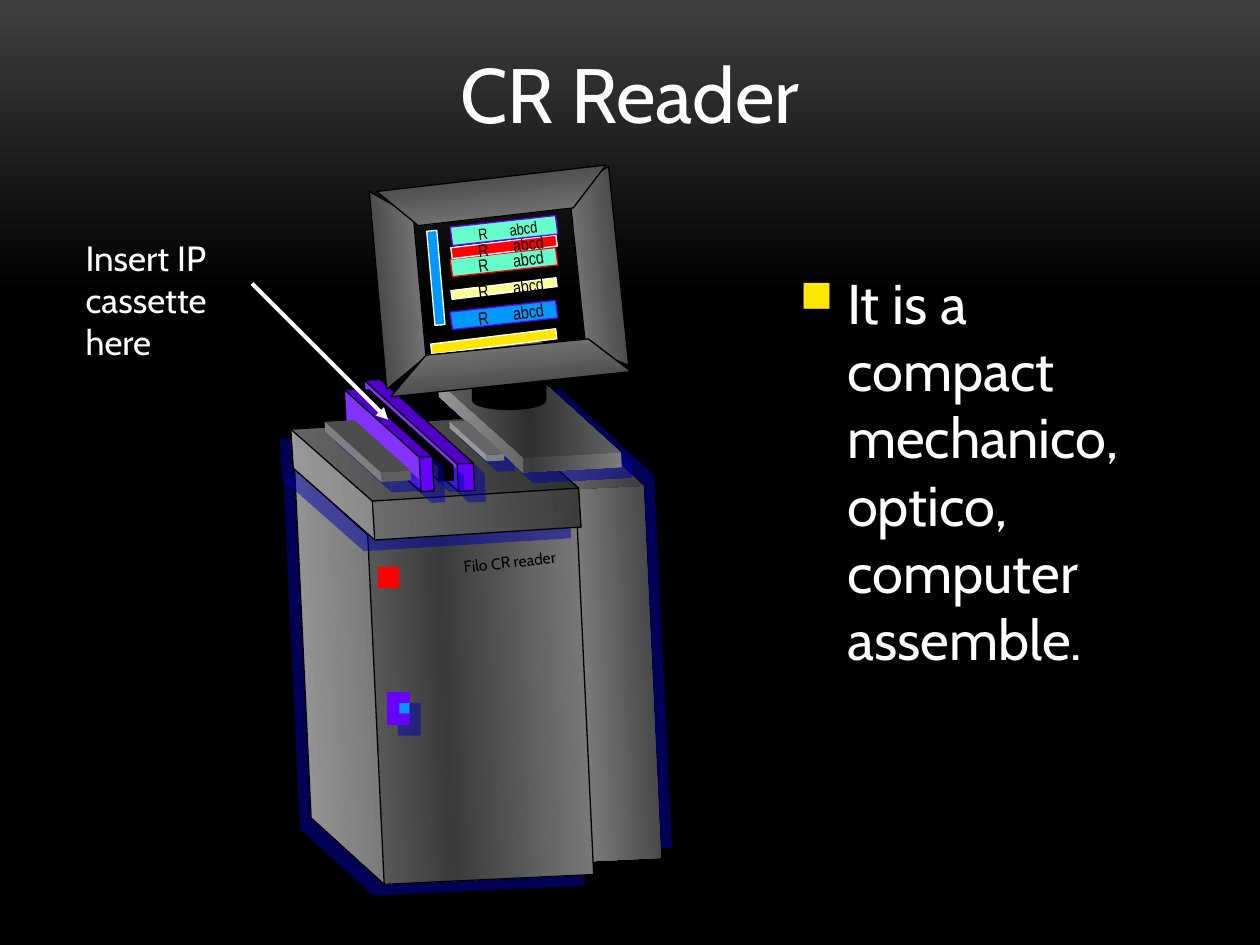
from lxml import etree
from pptx import Presentation
from pptx.dml.color import RGBColor
from pptx.enum.shapes import MSO_CONNECTOR, MSO_SHAPE
from pptx.enum.text import MSO_ANCHOR, PP_ALIGN
from pptx.oxml.ns import qn
from pptx.util import Pt

CUBE, CAN, RECT = MSO_SHAPE.CUBE, MSO_SHAPE.CAN, MSO_SHAPE.RECTANGLE
BAR = MSO_SHAPE.PARALLELOGRAM
CENTER, MIDDLE = PP_ALIGN.CENTER, MSO_ANCHOR.MIDDLE

# Content: colours and gradients
WHITE, BLACK, RED, BLUE = "FFFFFF", "000000", "FF0000", "0099FF"
VIOLET, YELLOW, MINT = "6600FF", "FFE701", "66FFCC"
LIGHT, DARK, SHADOW = "808080", "3B3B3B", "0000AC"
DARK_EDGES = [(0, DARK), (50, LIGHT), (100, DARK)]
LIGHT_EDGES = [(0, LIGHT), (50, DARK), (100, LIGHT)]
FADE_OUT = [(0, LIGHT), (100, DARK)]
FADE_IN = [(0, DARK), (100, LIGHT)]
BACKDROP = [(0, "3F3F3F"), (31, BLACK), (100, BLACK)]

# Content: cubes as box, rotation, depth, fill, line, shadow direction
cabinet = [
    ((194.4, 315.4, 264.2, 90), 267.3, 0.57, DARK_EDGES, None, 315),
    ((133.9, 303.8, 239.8, 159.8), 267.3, 0.25, LIGHT_EDGES, BLACK, 135),
    ((216, 192.2, 66.2, 162), 266.4, 0.663, FADE_OUT, BLACK, 135),
    ((206.6, 218.9, 66.2, 59.8), 267, 0.845, VIOLET, BLACK, 45),
    ((275.8, 191.5, 54, 102.2), 267, 0.845, LIGHT_EDGES, None, 45),
]
cassette_slot = [
    ((203.8, 221.8, 54, 54), 267, 0.845, BLACK, BLACK, 45),
    ((192.2, 227.5, 60.5, 48.2), 267, 0.845, VIOLET, BLACK, 45),
    ((192.2, 234, 36, 47.5), 267, 0.845, "5F5F5F", None, 45),
    ((260.6, 236.9, 23.8, 30.2), 267, 0.845, LIGHT, None, 45),
]

# Content: screen bars as middle height, thickness, fill, line, text size
BAR_MIDDLE, BAR_LENGTH = 288, 60.5
screen_bars = [
    (149.8, 11.5, MINT, RED, 10),
    (141.1, 7.2, RED, WHITE, 10),
    (164.9, 5.8, "FFFF99", WHITE, 10),
    (180, 11.5, BLUE, VIOLET, 10),
    (131.8, 12.2, MINT, VIOLET, 9),
]

# Content: monitor frame as corners, gradient angle
monitor_frame = [
    ([(221, 222.5), (243.4, 203.8), (236.2, 123.8), (211, 109.4)], 354.8),
    ([(347.8, 95), (325.4, 110.2), (334.8, 198.7), (359.3, 208.8)], 174.2),
    ([(215.3, 109.4), (239, 128.9), (327.6, 118.8), (346.3, 94.3)], 83.5),
    ([(360.7, 212.4), (336.2, 193.7), (243.4, 203), (223.2, 226.8)], 264.2),
]


def color(hex_text):
    return RGBColor.from_string(hex_text)


def add_xml(parent, tag, **attributes):
    return etree.SubElement(parent, qn(tag), {k: str(v) for k, v in attributes.items()})


def set_gradient(fill, holder, stops, angle):
    fill.gradient()
    gradient = next(holder.iter(qn("a:gradFill")))
    stop_list = gradient.find(qn("a:gsLst"))
    for old in list(stop_list):
        stop_list.remove(old)
    for position, hex_text in stops:
        stop = add_xml(stop_list, "a:gs", pos=position * 1000)
        add_xml(stop, "a:srgbClr", val=hex_text)
    direction = gradient.find(qn("a:lin"))
    direction.set("ang", str(round(angle * 60000)))
    direction.set("scaled", "0")


def style(shape, fill, line=None, shadow=None, angle=90):
    if isinstance(fill, str):
        shape.fill.solid()
        shape.fill.fore_color.rgb = color(fill)
    else:
        set_gradient(shape.fill, shape.element.spPr, fill, angle)
    if line:
        shape.line.color.rgb = color(line)
        shape.line.width = Pt(0.75)
    else:
        shape.line.fill.background()
    shape.shadow.inherit = False
    if shadow is not None:
        effects = shape.element.spPr.find(qn("a:effectLst"))
        outer = add_xml(effects, "a:outerShdw", blurRad=0, dist=Pt(8.5),
                        dir=shadow * 60000, algn="ctr", rotWithShape=0)
        add_xml(add_xml(outer, "a:srgbClr", val=SHADOW), "a:alpha", val=50000)


def add_part(kind, box, fill, line=None, rotation=0, depth=None, shadow=None):
    part = slide.shapes.add_shape(kind, *map(Pt, box))
    part.rotation = rotation
    if depth is not None:
        part.adjustments[0] = depth
    style(part, fill, line, shadow)
    return part


def add_cubes(cubes):
    for box, rotation, depth, fill, line, shadow in cubes:
        add_part(CUBE, box, fill, line, rotation, depth, shadow)


def write(shape, text, size, font="Cabin", ink=WHITE, align=None, anchor=None,
          wrap=True, bullet=None, indent=0, tab=None):
    frame = shape.text_frame
    frame.word_wrap = wrap
    if anchor is not None:
        frame.vertical_anchor = anchor
    paragraph = frame.paragraphs[0]
    paragraph.text = text
    if align is not None:
        paragraph.alignment = align
    props = paragraph._p.get_or_add_pPr()
    if bullet:
        props.set("marL", str(Pt(indent)))
        props.set("indent", str(-Pt(indent)))
        add_xml(add_xml(props, "a:buClr"), "a:srgbClr", val=YELLOW)
        add_xml(props, "a:buSzPct", val=80000)
        add_xml(props, "a:buChar", char=bullet)
    if tab:
        add_xml(add_xml(props, "a:tabLst"), "a:tab", pos=Pt(tab), algn="l")
    paragraph.font.size = Pt(size)
    paragraph.font.name = font
    paragraph.font.color.rgb = color(ink)


def add_text(box, text, size, rotation=0, **format_options):
    text_box = slide.shapes.add_textbox(*map(Pt, box))
    text_box.rotation = rotation
    write(text_box, text, size, **format_options)


presentation = Presentation()
presentation.slide_width, presentation.slide_height = Pt(720), Pt(540)
slide = presentation.slides.add_slide(presentation.slide_layouts[6])
set_gradient(slide.background.fill, slide.element, BACKDROP, 90)

# Title and description
add_text((36, 21.6, 648, 62.6), "CR Reader", 44, align=CENTER, anchor=MIDDLE)
add_text((450, 149.8, 221.8, 246.2),
         "It is a compact mechanico, optico, computer assemble.", 32,
         bullet="■", indent=27)

# Cabinet and monitor neck
add_cubes(cabinet)
add_part(CAN, (270, 192.2, 41.8, 41.8), BLACK, BLACK)

# Screen
for middle, thickness, fill, line, size in screen_bars:
    box = (BAR_MIDDLE - thickness / 2, middle - BAR_LENGTH / 2, thickness, BAR_LENGTH)
    bar = add_part(BAR, box, fill, line, 82.3, 0.127)
    write(bar, "R\tabcd", size, font="Arial Narrow", ink=BLACK, align=CENTER,
          anchor=MIDDLE, wrap=False, tab=2 * size)
    body = bar.text_frame._txBody.bodyPr
    body.set("vert", "eaVert")
    body.set("rot", str(180 * 60000))
add_part(RECT, (246.2, 192.2, 72, 5.8), YELLOW, WHITE, 353)
add_part(RECT, (246.2, 131.8, 5.8, 54), BLUE, WHITE, 355)

# Monitor frame
for corners, angle in monitor_frame:
    points = [(Pt(x), Pt(y)) for x, y in corners]
    outline = slide.shapes.build_freeform(*points[0])
    outline.add_line_segments(points[1:], close=True)
    style(outline.convert_to_shape(), FADE_IN, BLACK, angle=angle)

# Cassette slot and front panel controls
add_cubes(cassette_slot)
add_part(RECT, (221.8, 396, 12.2, 18), VIOLET, VIOLET, shadow=45)
add_part(RECT, (216, 324, 12.2, 12.2), RED)
add_part(RECT, (228.2, 401.8, 5.8, 5.8), BLUE)
add_text((257.8, 311.8, 71.3, 18), "Filo CR reader", 9, rotation=354, ink=BLACK)

# Pointer to the slot
pointer = slide.shapes.add_connector(
    MSO_CONNECTOR.STRAIGHT, Pt(144), Pt(162), Pt(221.8), Pt(239.8))
pointer.line.color.rgb = color(WHITE)
pointer.line.width = Pt(2.25)
add_xml(pointer.line._get_or_add_ln(), "a:tailEnd", type="triangle")
add_xml(pointer.element.spPr, "a:effectLst")
add_text((41.8, 131.8, 95.8, 79.2), "Insert IP cassette here", 20)

presentation.save("out.pptx")
